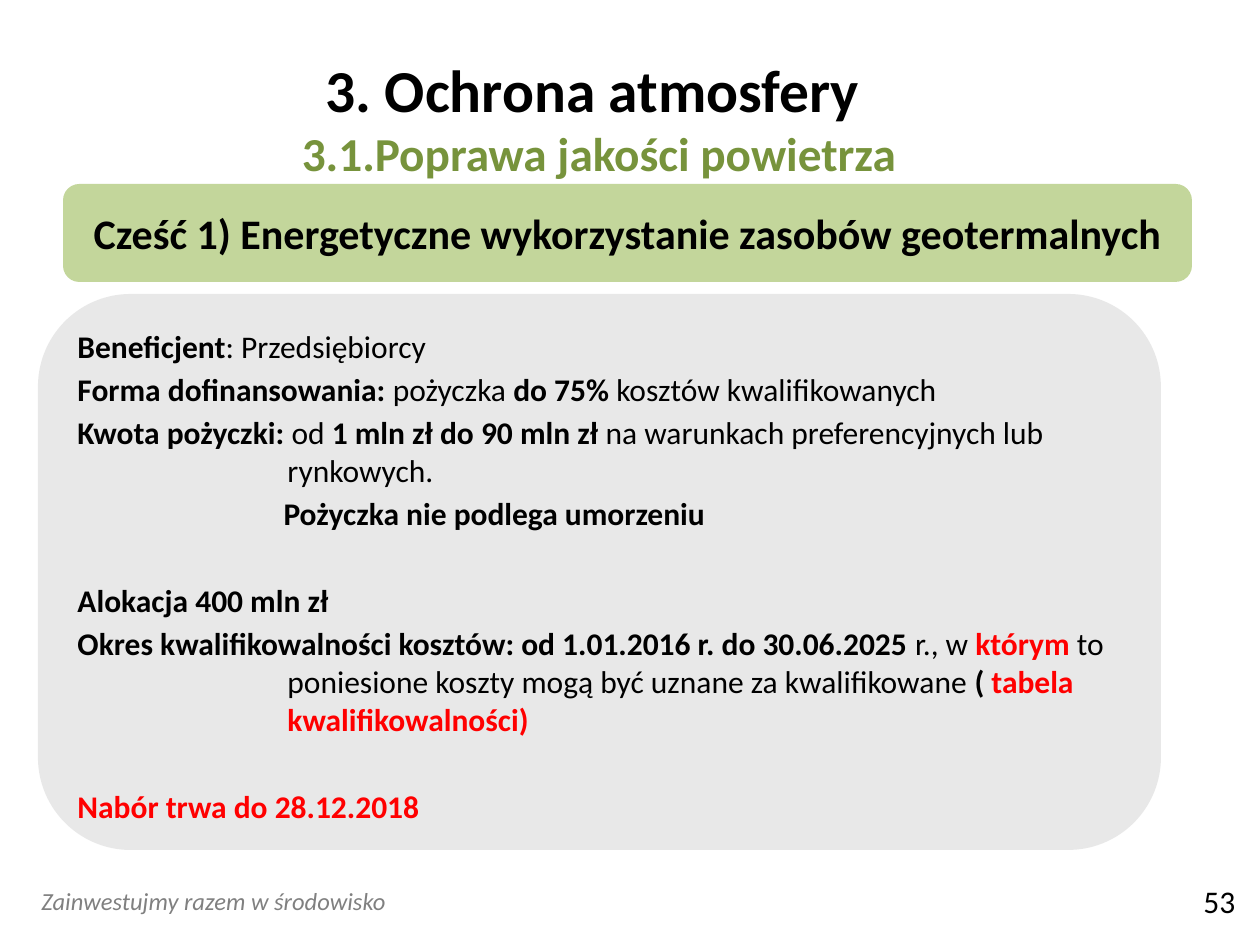
from dataclasses import dataclass

from lxml import etree
from pptx import Presentation
from pptx.dml.color import RGBColor
from pptx.enum.shapes import MSO_SHAPE
from pptx.enum.text import MSO_ANCHOR, MSO_AUTO_SIZE, PP_ALIGN
from pptx.oxml.ns import qn
from pptx.util import Emu, Pt

ROUNDED = MSO_SHAPE.ROUNDED_RECTANGLE
CENTER, LEFT = PP_ALIGN.CENTER, PP_ALIGN.LEFT
TOP, MIDDLE = MSO_ANCHOR.TOP, MSO_ANCHOR.MIDDLE


@dataclass(frozen=True)
class Theme:
    font: str = "Calibri"
    ink: str = "000000"
    accent: str = "FF0000"
    green: str = "77933C"
    banner: str = "C3D69B"
    panel: str = "D9D9D9"
    panel_opacity: int = 59
    muted: str = "808080"
    title_size: int = 34
    subtitle_size: int = 27
    banner_size: int = 24
    body_size: int = 18
    footer_size: int = 14
    paragraph_gap: int = 3
    section_gap: int = 25


THEME = Theme()

TITLE = ("3. Ochrona atmosfery ", "3.1.Poprawa jakości powietrza")
BANNER = "Cześć 1) Energetyczne wykorzystanie zasobów geotermalnych"
FOOTER = "Zainwestujmy razem w środowisko"
PAGE_NUMBER = "53"

PLAIN = (THEME.ink, False)
STRONG = (THEME.ink, True)
ALERT = (THEME.accent, True)

# (left margin px, first-line indent px, starts a section, spans)
DETAILS = [
    (174, -174, False, [("Beneficjent", STRONG), (": Przedsiębiorcy", PLAIN)]),
    (174, -174, False, [
        ("Forma dofinansowania: ", STRONG), ("pożyczka ", PLAIN),
        ("do 75%", STRONG), (" kosztów kwalifikowanych", PLAIN)]),
    (210, -210, False, [
        ("Kwota pożyczki: ", STRONG), ("od ", PLAIN),
        ("1 mln zł do 90 mln zł ", STRONG),
        ("na warunkach preferencyjnych lub rynkowych.", PLAIN)]),
    (206, 0, False, [("Pożyczka nie podlega umorzeniu", STRONG)]),
    (210, -210, True, [("Alokacja 400 mln zł", STRONG)]),
    (210, -210, False, [
        ("Okres kwalifikowalności kosztów: od 1.01.2016 r. do 30.06.2025 ", STRONG),
        ("r., w ", PLAIN), ("którym", ALERT),
        (" to poniesione koszty mogą być uznane za kwalifikowane", PLAIN),
        (" ( ", STRONG), ("tabela kwalifikowalności)", ALERT)]),
    (210, -210, True, [("Nabór trwa do 28.12.2018", ALERT)]),
]

# left, top, width, height in px
SLIDE_SIZE = (1260, 945)
TITLE_AREA = (74, 38, 1050, 158)
BANNER_AREA = (63, 184, 1129, 98)
PANEL_AREA = (38, 294, 1123, 556)
FOOTER_AREA = (29, 880, 532, 43)
NUMBER_AREA = (1191, 876, 69, 50)


def px(length):
    return Emu(round(length * 914400 / 126))


def place(area):
    return [px(length) for length in area]


def style(font, size, color, bold=False, italic=False):
    font.name = THEME.font
    font.size = Pt(size)
    font.color.rgb = RGBColor.from_string(color)
    font.bold = bold
    font.italic = italic


def add_rounded(slide, area, color, anchor):
    shape = slide.shapes.add_shape(ROUNDED, *place(area))
    shape.shadow.inherit = False
    shape.fill.solid()
    shape.fill.fore_color.rgb = RGBColor.from_string(color)
    shape.line.fill.background()
    shape.text_frame.word_wrap = True
    shape.text_frame.vertical_anchor = anchor
    return shape


def add_label(slide, area, text, size, color, italic=False):
    frame = slide.shapes.add_textbox(*place(area)).text_frame
    frame.word_wrap = True
    frame.text = text
    style(frame.paragraphs[0].runs[0].font, size, color, italic=italic)


def add_title(slide):
    title = slide.shapes.title
    title.left, title.top, title.width, title.height = place(TITLE_AREA)
    frame = title.text_frame
    frame.auto_size = MSO_AUTO_SIZE.NONE
    frame.vertical_anchor = MIDDLE
    frame.text = "\v".join(TITLE)
    para = frame.paragraphs[0]
    para.alignment = CENTER
    heading, subheading = para.runs
    style(heading.font, THEME.title_size, THEME.ink, bold=True)
    style(subheading.font, THEME.subtitle_size, THEME.green, bold=True)


def add_banner(slide):
    frame = add_rounded(slide, BANNER_AREA, THEME.banner, MIDDLE).text_frame
    frame.text = BANNER
    para = frame.paragraphs[0]
    para.alignment = CENTER
    style(para.runs[0].font, THEME.banner_size, THEME.ink, bold=True)


def add_details(slide):
    panel = add_rounded(slide, PANEL_AREA, THEME.panel, TOP)
    color = panel.fill._xPr.find(qn("a:solidFill"))[0]
    etree.SubElement(color, qn("a:alpha"), val=str(THEME.panel_opacity * 1000))
    frame = panel.text_frame
    for index, (margin, indent, new_section, spans) in enumerate(DETAILS):
        para = frame.add_paragraph() if index else frame.paragraphs[0]
        para.alignment = LEFT
        para.space_after = Pt(THEME.paragraph_gap)
        if new_section:
            para.space_before = Pt(THEME.section_gap)
        properties = para._p.get_or_add_pPr()
        properties.set("marL", str(px(margin)))
        properties.set("indent", str(px(indent)))
        for text, (ink, bold) in spans:
            span = para.add_run()
            span.text = text
            style(span.font, THEME.body_size, ink, bold)


def main():
    deck = Presentation()
    deck.slide_width, deck.slide_height = place(SLIDE_SIZE)
    page = deck.slides.add_slide(deck.slide_layouts.get_by_name("Title Only"))
    add_label(page, FOOTER_AREA, FOOTER, THEME.footer_size, THEME.muted, italic=True)
    add_details(page)
    add_label(page, NUMBER_AREA, PAGE_NUMBER, THEME.body_size, THEME.ink)
    add_title(page)
    add_banner(page)
    deck.save("out.pptx")


if __name__ == "__main__":
    main()
